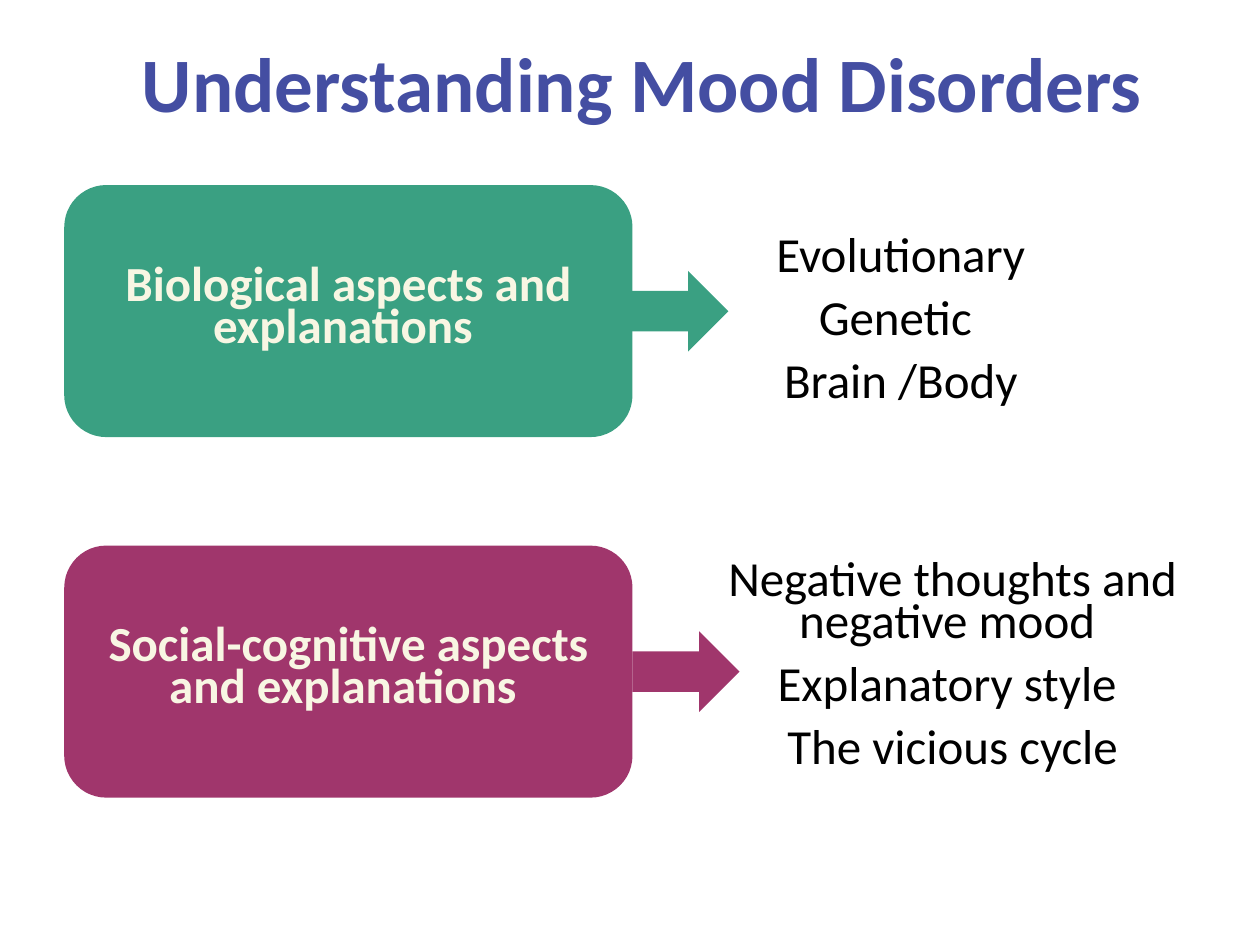
import pptx
import pptx.util
import pptx.dml.color
import pptx.enum.shapes
import pptx.enum.text

Pt = pptx.util.Pt
MSO_SHAPE = pptx.enum.shapes.MSO_SHAPE
ANCHOR = pptx.enum.text.MSO_ANCHOR
COLORS = {
    "title": "444EA2",
    "green": "3AA082",
    "plum": "A0366C",
    "cream": "F8F6E3",
    "black": "000000",
}


def write(sp, lines, size=28, color="black", bold=False, spacing=24, after=0,
          anchor=ANCHOR.TOP, margins=(7.2, 3.6, 7.2, 3.6)):
    tf = sp.text_frame
    tf.word_wrap = True
    tf.vertical_anchor = anchor
    tf.margin_left, tf.margin_top, tf.margin_right, tf.margin_bottom = map(Pt, margins)
    for i, line in enumerate(lines):
        p = tf.paragraphs[0] if i == 0 else tf.add_paragraph()
        p.alignment = pptx.enum.text.PP_ALIGN.CENTER
        p.line_spacing = Pt(spacing)
        p.space_after = Pt(after)
        r = p.add_run()
        r.text = line
        r.font.name = "Calibri"
        r.font.size = Pt(size)
        r.font.bold = bold
        r.font.color.rgb = pptx.dml.color.RGBColor.from_string(COLORS[color])


def add_filled(s, kind, left, top, width, height, color):
    sp = s.shapes.add_shape(kind, Pt(left), Pt(top), Pt(width), Pt(height))
    sp.shadow.inherit = False
    sp.fill.solid()
    sp.fill.fore_color.rgb = pptx.dml.color.RGBColor.from_string(COLORS[color])
    sp.line.fill.background()
    return sp


prs = pptx.Presentation()
prs.slide_width, prs.slide_height = Pt(720), Pt(540)
s = prs.slides.add_slide(prs.slide_layouts[6])

sp = s.shapes.add_textbox(Pt(0), Pt(13.7), Pt(720), Pt(80.6))
write(sp, ["Understanding Mood Disorders"], size=44, color="title", bold=True,
      spacing=38, anchor=ANCHOR.MIDDLE, margins=(21.6, 3.6, 7.2, 3.6))

rows = [
    ("green", 105.8, "Biological aspects and explanations ", 355, (361.4, 133.9, 105.8),
     ["Evolutionary", "Genetic ", "Brain /Body"]),
    ("plum", 311.8, "Social-cognitive aspects and explanations ", 361.4, (391, 319, 129.6),
     ["Negative thoughts and negative mood ", "Explanatory style ", "The vicious cycle"]),
]
for color, top, heading, arrow_left, (left, text_top, height), points in rows:
    sp = add_filled(s, MSO_SHAPE.ROUNDED_RECTANGLE, 36.7, top, 324.7, 144, color)
    write(sp, [heading], color="cream", bold=True, after=6,
          anchor=ANCHOR.MIDDLE, margins=(14.4,) * 4)
    sp = s.shapes.add_textbox(Pt(left), Pt(text_top), Pt(306.7), Pt(height))
    write(sp, points, after=12)
    add_filled(s, MSO_SHAPE.RIGHT_ARROW, arrow_left, top + 49, 61.2, 46.1, color)

prs.save("out.pptx")
